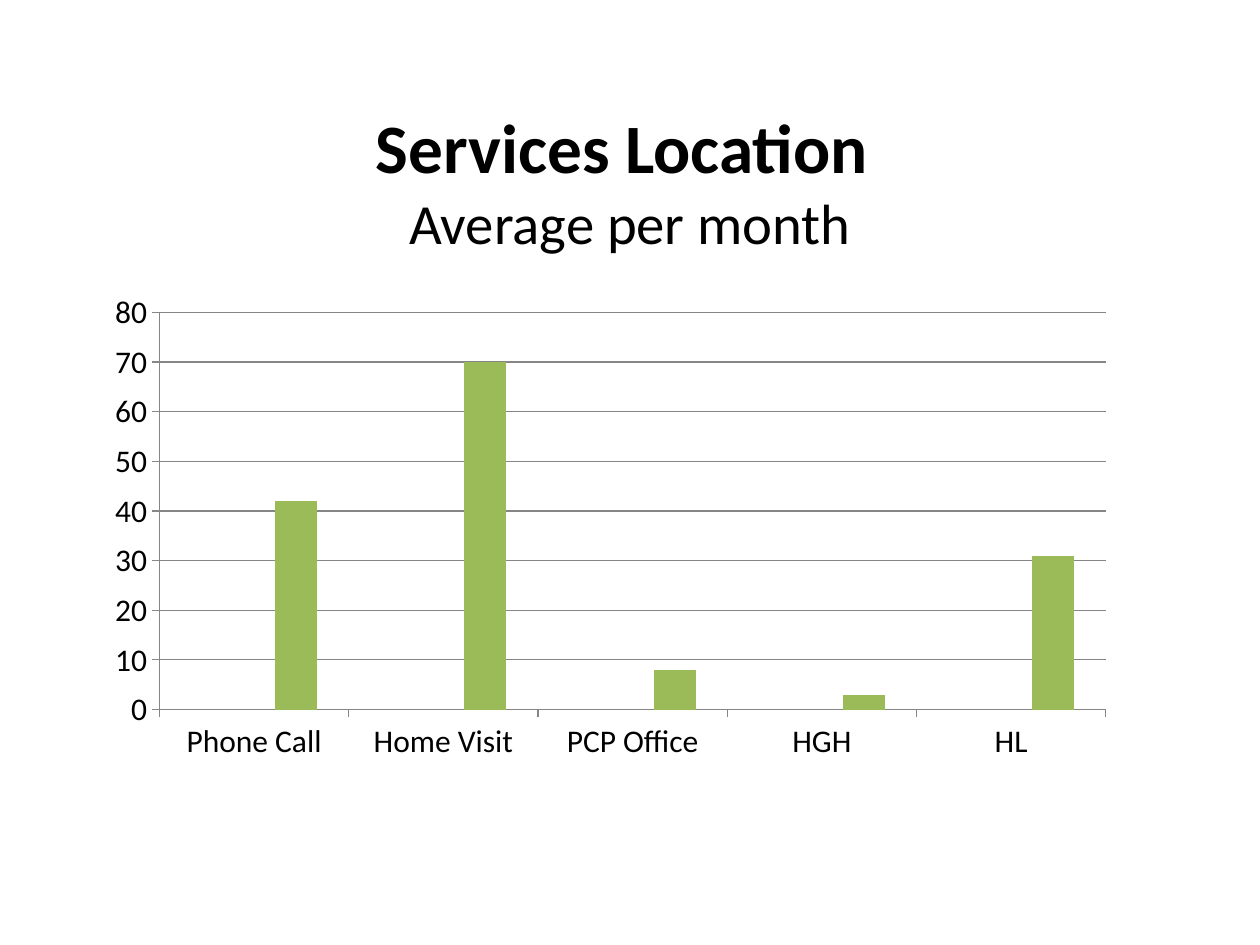
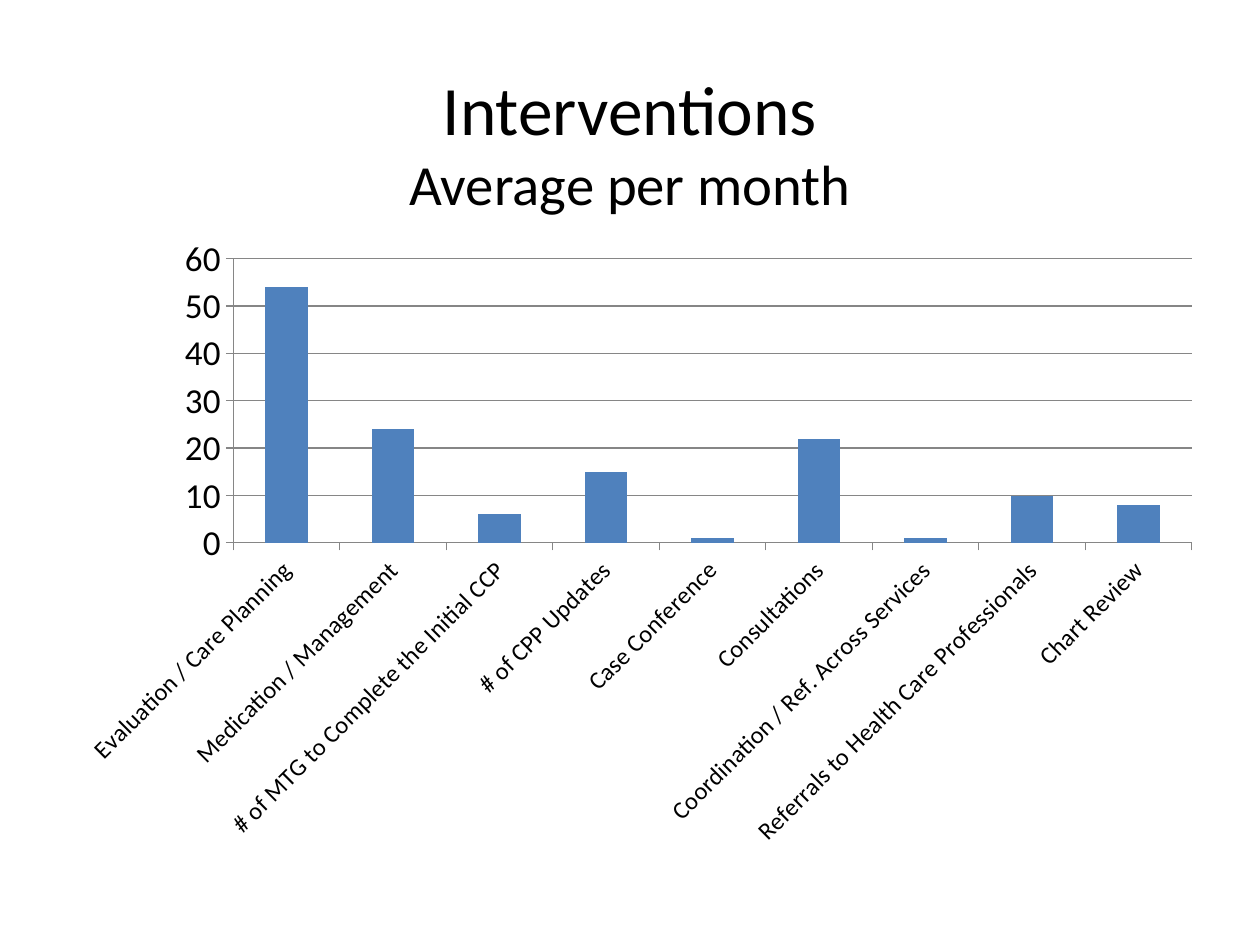
from pptx import Presentation
from pptx.chart.data import CategoryChartData
from pptx.dml.color import RGBColor
from pptx.enum.chart import XL_CHART_TYPE, XL_TICK_MARK
from pptx.enum.text import MSO_ANCHOR, MSO_AUTO_SIZE, PP_ALIGN
from pptx.util import Pt

BLACK = RGBColor(0x00, 0x00, 0x00)
GREY = RGBColor(0x86, 0x86, 0x86)
BLUE = RGBColor(0x4F, 0x81, 0xBD)
RED = RGBColor(0xC0, 0x50, 0x4D)
GREEN = RGBColor(0x9B, 0xBB, 0x59)
SERIES_COLORS = (BLUE, RED, GREEN)
FONT = "Calibri"
TITLE_ONLY = 5

LOCATIONS = ("Phone Call", "Home Visit", "PCP Office", "HGH", "HL")
LOCATION_SERIES = ([None] * 5, [None] * 5, (42, 70, 8, 3, 31))
INTERVENTIONS = (
    "Evaluation / Care Planning",
    "Medication / Management",
    "# of MTG to Complete the Initial CCP",
    "# of CPP Updates",
    "Case Conference",
    "Consultations",
    "Coordination / Ref. Across Services",
    "Referrals to Health Care Professionals",
    "Chart Review",
)
INTERVENTION_SERIES = ((54, 24, 6, 15, 1, 22, 1, 10, 8),)


def style_font(font, size):
    """Apply the shared typeface and colour at the given size."""
    font.name = FONT
    font.size = Pt(size)
    font.color.rgb = BLACK


def add_title(slide, heading, top, height, bold=False):
    """Fill the title with a heading and its smaller second line."""
    sp = slide.shapes.title
    sp.left, sp.top, sp.width, sp.height = Pt(36), Pt(top), Pt(648), Pt(height)
    tf = sp.text_frame
    tf.auto_size = MSO_AUTO_SIZE.NONE
    tf.vertical_anchor = MSO_ANCHOR.MIDDLE
    p = tf.paragraphs[0]
    p.text = f"{heading}\vAverage per month"
    p.alignment = PP_ALIGN.CENTER
    for r, size, weight in zip(p.runs, (39.6, 32.4), (bold, False)):
        style_font(r.font, size)
        r.font.bold = weight


def style_axis(axis, size):
    """Give an axis its label size, outer ticks and grey line."""
    style_font(axis.tick_labels.font, size)
    axis.major_tick_mark = XL_TICK_MARK.OUTSIDE
    axis.minor_tick_mark = XL_TICK_MARK.NONE
    axis.format.line.color.rgb = GREY
    axis.format.line.width = Pt(0.75)


def add_column_chart(slide, box, categories, series, maximum, sizes, slanted=False):
    """Add a clustered column chart with horizontal gridlines."""
    data = CategoryChartData(number_format="0")
    data.categories = categories
    for number, values in enumerate(series, 1):
        data.add_series(f"Series {number}", values)
    chart = slide.shapes.add_chart(
        XL_CHART_TYPE.COLUMN_CLUSTERED, *map(Pt, box), data).chart
    chart.has_legend = False
    chart.has_title = False
    style_font(chart.font, 10)

    plot = chart.plots[0]
    plot.gap_width = 150
    plot.overlap = 0
    plot.vary_by_categories = False
    for column, color in zip(plot.series, SERIES_COLORS):
        column.format.fill.solid()
        column.format.fill.fore_color.rgb = color

    for axis, size in zip((chart.category_axis, chart.value_axis), sizes):
        style_axis(axis, size)
    if slanted:
        labels = chart.category_axis.tick_labels.font._element
        body = labels.xpath("ancestor::c:txPr/a:bodyPr")[0]
        body.set("rot", "-2700000")
        body.set("vert", "horz")
    axis = chart.value_axis
    axis.minimum_scale, axis.maximum_scale, axis.major_unit = 0, maximum, 10
    axis.has_major_gridlines = True
    axis.major_gridlines.format.line.color.rgb = GREY
    axis.major_gridlines.format.line.width = Pt(0.75)


def main():
    """Build the two chart slides."""
    prs = Presentation()
    prs.slide_width, prs.slide_height = Pt(720), Pt(540)
    layout = prs.slide_layouts[TITLE_ONLY]

    s = prs.slides.add_slide(layout)
    add_title(s, "Services Location ", 54.7, 96.5, bold=True)
    add_column_chart(s, (54, 162, 589.7, 277.9), LOCATIONS,
                     LOCATION_SERIES, 80, (18, 18))

    s = prs.slides.add_slide(layout)
    add_title(s, "Interventions", 36, 90)
    add_column_chart(s, (36.7, 128.2, 657.4, 362.9), INTERVENTIONS,
                     INTERVENTION_SERIES, 60, (14, 20), slanted=True)

    prs.save("out.pptx")


if __name__ == "__main__":
    main()
